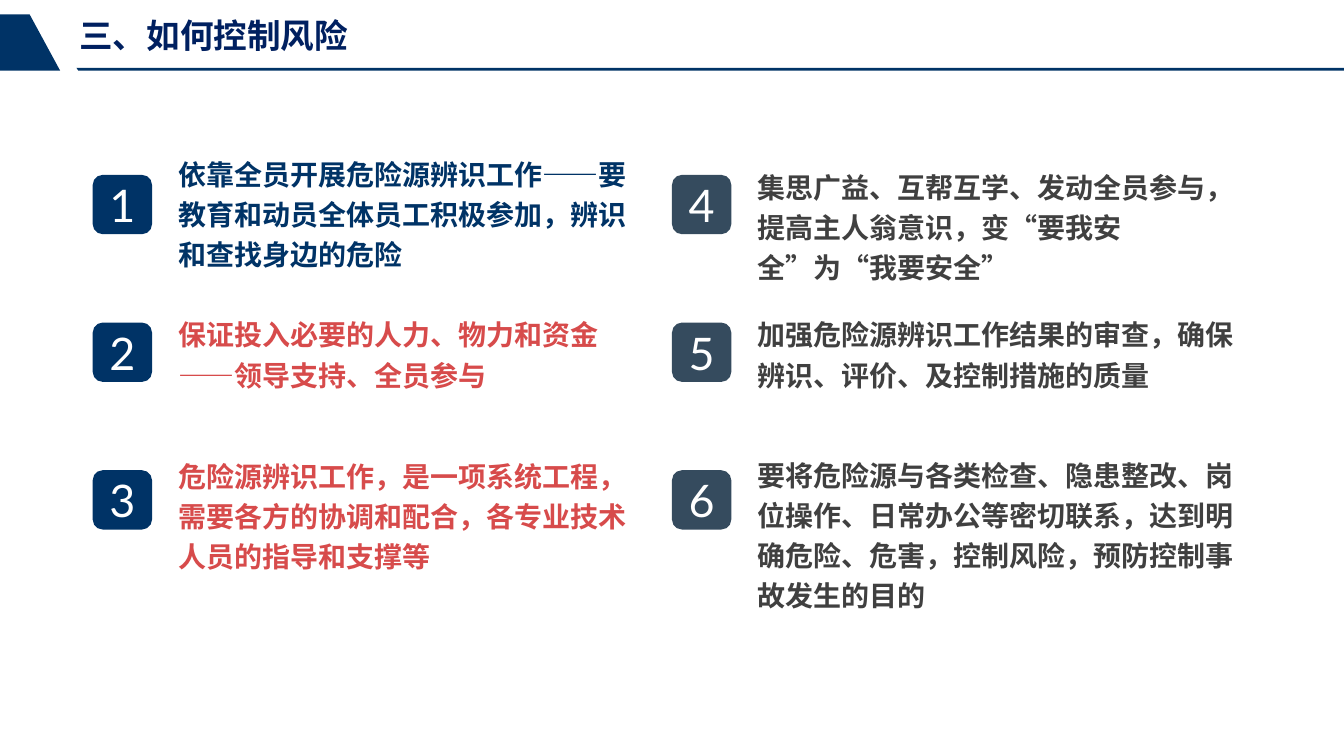
import pptx
import pptx.dml.color
import pptx.enum.lang
import pptx.enum.shapes
import pptx.enum.text
import pptx.oxml
import pptx.oxml.ns
import pptx.util
from pptx.util import Inches

COLORS = {"navy": "003366", "title": "002060", "slate": "354B5E",
          "red": "D74B4B", "gray": "404040", "white": "FFFFFF"}
CJK_FONT = "Noto Sans CJK SC"

TITLE = "三、如何控制风险"
HEADER_RULE = [(0.8, 0.71), (14.06, 0.71), (14.06, 0.74), (0.82, 0.74)]
HEADER_TAB = [(0.31, 0.15), (0.63, 0.74), (0, 0.74), (0, 0.15)]

# Each column: badge left, badge colour, measures
# Each measure: text, colour, text top, text width, line count
COLUMNS = [
    (0.97, "navy", [
        ("依靠全员开展危险源辨识工作——要教育和动员全体员工积极参加，辨识和查找身边的危险",
         "navy", 1.53, 5.09, 3),
        ("保证投入必要的人力、物力和资金——领导支持、全员参与",
         "red", 3.21, 4.93, 2),
        ("危险源辨识工作，是一项系统工程，需要各方的协调和配合，各专业技术人员的指导和支撑等",
         "red", 4.69, 4.93, 3),
    ]),
    (7.03, "slate", [
        ("集思广益、互帮互学、发动全员参与，提高主人翁意识，变“要我安全”为“我要安全”",
         "gray", 1.67, 5.27, 3),
        ("加强危险源辨识工作结果的审查，确保辨识、评价、及控制措施的质量",
         "gray", 3.21, 5.27, 2),
        ("要将危险源与各类检查、隐患整改、岗位操作、日常办公等密切联系，达到明确危险、危害，控制风险，预防控制事故发生的目的",
         "gray", 4.68, 5.27, 4),
    ]),
]
BADGE_TOP, BADGE_PITCH, BADGE_SIZE = 1.83, 1.545, 0.62
TEXT_OFFSET = 0.8
LINE_HEIGHT, TEXT_PADDING = 0.42, 0.07


def rgb(color):
    return pptx.dml.color.RGBColor.from_string(COLORS[color])


def paint(shape, color):
    shape.shadow.inherit = False
    shape.fill.solid()
    shape.fill.fore_color.rgb = rgb(color)
    shape.line.fill.background()


def add_run(paragraph, text, size, color, latin, bold=False):
    run = paragraph.add_run()
    run.text = text
    font = run.font
    font.size = pptx.util.Pt(size)
    font.bold = bold
    font.color.rgb = rgb(color)
    font.name = latin
    font.language_id = pptx.enum.lang.MSO_LANGUAGE_ID.SIMPLIFIED_CHINESE
    east_asian = pptx.oxml.parse_xml(
        f'<a:ea {pptx.oxml.ns.nsdecls("a")} typeface="{CJK_FONT}"/>')
    run._r.rPr.find(pptx.oxml.ns.qn("a:latin")).addnext(east_asian)


def clear_margins(frame):
    frame.margin_left = frame.margin_right = 0
    frame.margin_top = frame.margin_bottom = 0


def add_outline(slide, points):
    corners = [(Inches(x), Inches(y)) for x, y in points]
    builder = slide.shapes.build_freeform(*corners[0])
    builder.add_line_segments(corners[1:], close=True)
    paint(builder.convert_to_shape(), "navy")


def add_title(slide):
    box = slide.shapes.add_textbox(
        Inches(0.83), Inches(0.15), Inches(4.54), Inches(0.43))
    frame = box.text_frame
    frame.word_wrap = True
    frame.vertical_anchor = pptx.enum.text.MSO_ANCHOR.MIDDLE
    clear_margins(frame)
    add_run(frame.paragraphs[0], TITLE, 25.3, "title", "Arial", bold=True)


def add_badge(slide, number, left, top, color):
    badge = slide.shapes.add_shape(
        pptx.enum.shapes.MSO_SHAPE.ROUNDED_RECTANGLE,
        Inches(left), Inches(top), Inches(BADGE_SIZE), Inches(BADGE_SIZE))
    paint(badge, color)
    frame = badge.text_frame
    clear_margins(frame)
    frame.vertical_anchor = pptx.enum.text.MSO_ANCHOR.MIDDLE
    paragraph = frame.paragraphs[0]
    paragraph.alignment = pptx.enum.text.PP_ALIGN.CENTER
    add_run(paragraph, str(number), 33.8, "white", "Lato")


def add_measure(slide, left, text, color, top, width, lines):
    box = slide.shapes.add_textbox(
        Inches(left), Inches(top), Inches(width),
        Inches(lines * LINE_HEIGHT + TEXT_PADDING))
    frame = box.text_frame
    frame.word_wrap = True
    frame.auto_size = pptx.enum.text.MSO_AUTO_SIZE.SHAPE_TO_FIT_TEXT
    paragraph = frame.paragraphs[0]
    paragraph.line_spacing = pptx.util.Pt(30.2)
    add_run(paragraph, text, 21.1, color, CJK_FONT, bold=True)


def main():
    deck = pptx.Presentation()
    deck.slide_width, deck.slide_height = Inches(14.06), Inches(7.91)
    slide = deck.slides.add_slide(deck.slide_layouts[6])

    add_outline(slide, HEADER_RULE)
    add_outline(slide, HEADER_TAB)
    add_title(slide)

    number = 1
    for left, badge_color, measures in COLUMNS:
        for row, measure in enumerate(measures):
            add_badge(slide, number, left, BADGE_TOP + row * BADGE_PITCH, badge_color)
            add_measure(slide, left + TEXT_OFFSET, *measure)
            number += 1

    deck.save("out.pptx")


if __name__ == "__main__":
    main()
